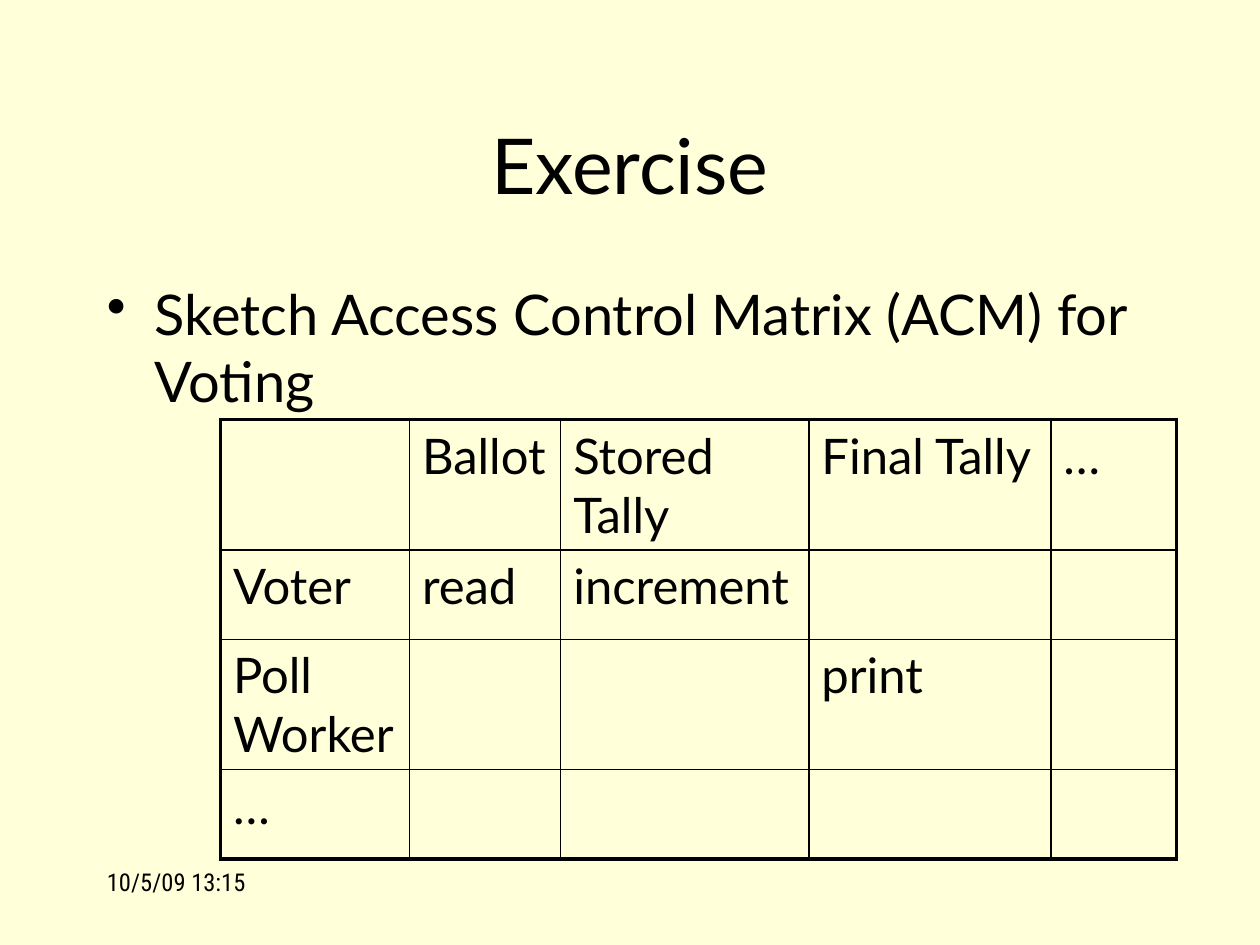
from lxml import etree
from pptx import Presentation
from pptx.dml.color import RGBColor
from pptx.enum.text import MSO_ANCHOR, PP_ALIGN
from pptx.oxml.ns import qn
from pptx.util import Inches, Pt

LEFT, CENTER = PP_ALIGN.LEFT, PP_ALIGN.CENTER
TOP, MIDDLE = MSO_ANCHOR.TOP, MSO_ANCHOR.MIDDLE
COLORS = {"paper": "FFFFD9", "ink": "000000"}
COLS = [1.5, 1.2, 1.97, 1.92, 1]
ROWS = [1.03, 0.71, 1.03, 0.71]
MATRIX = [
    ["", "Ballot", "Stored Tally", "Final Tally", "…"],
    ["Voter", "read", "increment", "", ""],
    ["Poll Worker", "", "", "print", ""],
    ["…", "", "", "", ""],
]


def color(name):
    return RGBColor.from_string(COLORS[name])


def write(frame, text, size=28, font="Lato", align=LEFT, bullet=False):
    para = frame.paragraphs[0]
    para.alignment = align
    run = para.add_run()
    run.text = text
    run.font.size = Pt(size)
    run.font.name = font
    run.font.color.rgb = color("ink")
    if bullet:
        props = para._p.get_or_add_pPr()
        props.set("marL", str(Inches(0.38)))
        props.set("indent", str(Inches(-0.38)))
        etree.SubElement(props, qn("a:buChar"), char="•")


def add_text(slide, text, left, top, width, height, anchor=TOP, **style):
    box = slide.shapes.add_textbox(
        Inches(left), Inches(top), Inches(width), Inches(height))
    frame = box.text_frame
    frame.word_wrap = True
    frame.vertical_anchor = anchor
    write(frame, text, **style)


def add_border(cell, side, width):
    props = cell._tc.get_or_add_tcPr()
    line = etree.SubElement(props, qn(f"a:ln{side}"), w=str(Pt(width)))
    fill = etree.SubElement(line, qn("a:solidFill"))
    etree.SubElement(fill, qn("a:srgbClr"), val=COLORS["ink"])


def add_matrix(slide, left, top):
    count, span = len(ROWS), len(COLS)
    table = slide.shapes.add_table(
        count, span, Inches(left), Inches(top),
        Inches(sum(COLS)), Inches(sum(ROWS))).table
    table.first_row = False
    table.horz_banding = False
    for col, width in zip(table.columns, COLS):
        col.width = Inches(width)
    for i, height in enumerate(ROWS):
        table.rows[i].height = Inches(height)
        for j, text in enumerate(MATRIX[i]):
            cell = table.cell(i, j)
            if text:
                write(cell.text_frame, text)
            outer = {"L": j == 0, "R": j == span - 1,
                     "T": i == 0, "B": i == count - 1}
            for side, thick in outer.items():
                add_border(cell, side, 2.25 if thick else 1)
            cell.fill.background()


def main():
    deck = Presentation()
    deck.slide_width, deck.slide_height = Inches(10), Inches(7.5)
    slide = deck.slides.add_slide(deck.slide_layouts[6])
    back = slide.background.fill
    back.solid()
    back.fore_color.rgb = color("paper")
    add_text(slide, "10/5/09 13:15", 0.75, 6.83, 2.08, 0.5,
             size=14, font="Roboto Condensed")
    add_text(slide, "Exercise", 0.75, 0.67, 8.5, 1.25,
             anchor=MIDDLE, size=44, align=CENTER)
    add_text(slide, "Sketch Access Control Matrix (ACM) for Voting",
             0.75, 2.17, 8.5, 4.5, size=32, bullet=True)
    add_matrix(slide, 1.75, 3.33)
    deck.save("out.pptx")


if __name__ == "__main__":
    main()
